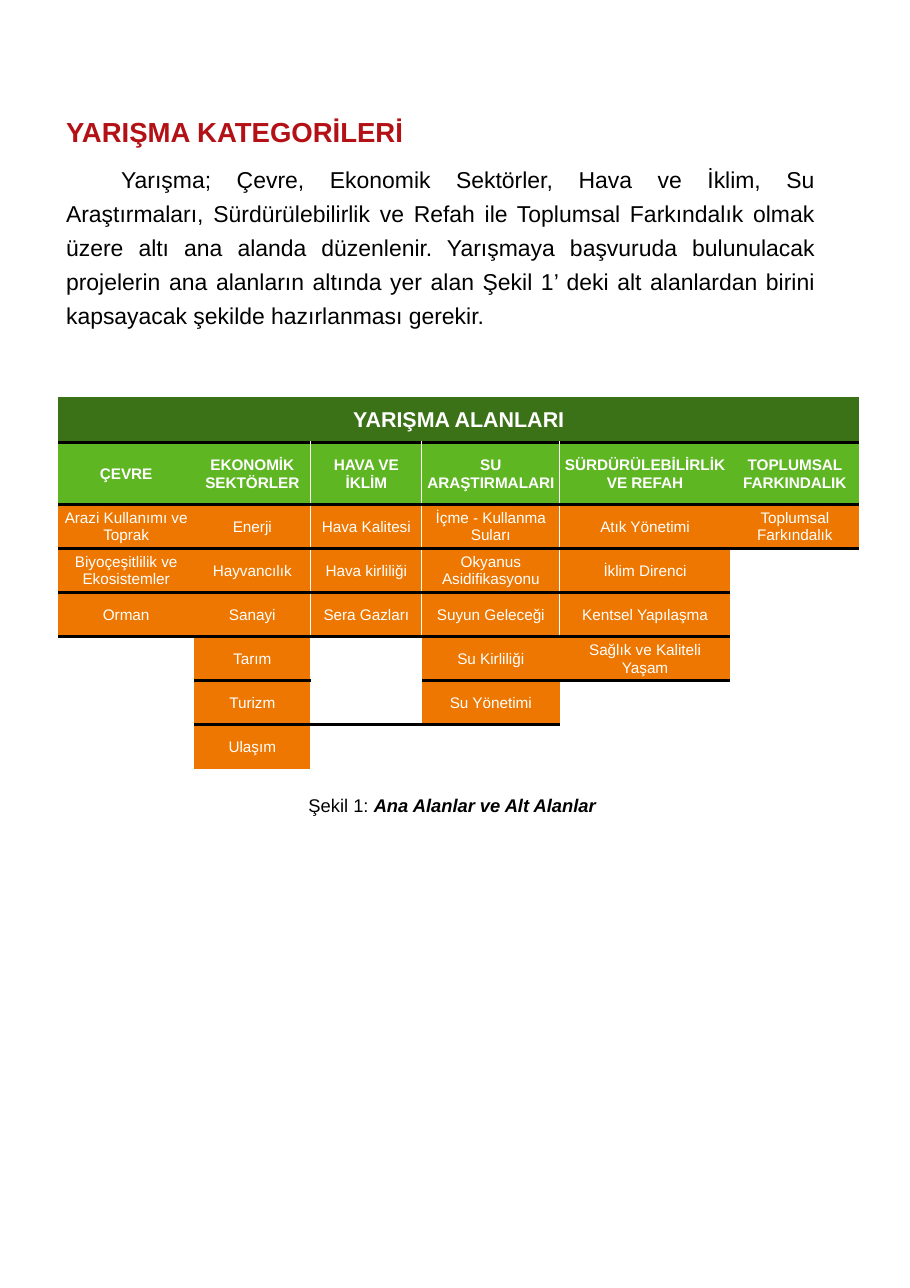
import pptx
import pptx.dml.color
import pptx.enum.text
import pptx.oxml
import pptx.oxml.ns
import pptx.util

Inches, Pt = pptx.util.Inches, pptx.util.Pt
ALIGN, ANCHOR = pptx.enum.text.PP_ALIGN, pptx.enum.text.MSO_ANCHOR
BLACK, WHITE = "000000", "FFFFFF"
DARK_GREEN, GREEN, ORANGE, RED = "3B7218", "5EB623", "ED7700", "B31116"
NO_STYLE = "{2D5ABB26-0587-4C30-8999-92F81FD0307C}"


def color(hex_value):
    return pptx.dml.color.RGBColor.from_string(hex_value)


def style(paragraph, size, hex_value, bold=False, align=ALIGN.LEFT):
    paragraph.alignment = align
    paragraph.font.name = "Arial"
    paragraph.font.size = Pt(size)
    paragraph.font.bold = bold
    paragraph.font.color.rgb = color(hex_value)


deck = pptx.Presentation()
deck.slide_width, deck.slide_height = Inches(8.26), Inches(11.69)
page = deck.slides.add_slide(deck.slide_layouts[5])
text_left, text_width = Inches(0.6), Inches(6.8)

# Heading
heading = page.shapes.title
heading.left, heading.top = text_left, Inches(1.04)
heading.width, heading.height = text_width, Inches(0.29)
heading.text_frame.text = "YARIŞMA KATEGORİLERİ"
style(heading.text_frame.paragraphs[0], 18, RED, bold=True)

# Introduction
intro = page.shapes.add_textbox(text_left, Inches(1.44), text_width, Inches(1.5))
intro.text_frame.text = (
    "Yarışma; Çevre, Ekonomik Sektörler, Hava ve İklim, Su Araştırmaları, "
    "Sürdürülebilirlik ve Refah ile Toplumsal Farkındalık olmak üzere altı ana "
    "alanda düzenlenir. Yarışmaya başvuruda bulunulacak projelerin ana alanların "
    "altında yer alan Şekil 1’ deki alt alanlardan birini kapsayacak şekilde "
    "hazırlanması gerekir.")
intro_text = intro.text_frame.paragraphs[0]
intro_text.line_spacing = 1.24
intro_text._p.get_or_add_pPr().set("indent", str(Inches(0.5)))
style(intro_text, 15, BLACK, align=ALIGN.JUSTIFY)

# Figure caption
caption = page.shapes.add_textbox(Inches(2.8), Inches(7.21), Inches(2.66), Inches(0.22))
caption_text = caption.text_frame.paragraphs[0]
style(caption_text, 12, BLACK)
caption_text.add_run().text = "Şekil 1: "
figure_name = caption_text.add_run()
figure_name.text = "Ana Alanlar ve Alt Alanlar"
figure_name.font.bold = figure_name.font.italic = True

for block in (heading, intro, caption):
    frame = block.text_frame
    frame.margin_left = frame.margin_right = frame.margin_top = frame.margin_bottom = 0
    frame.vertical_anchor = ANCHOR.TOP
    frame.auto_size = pptx.enum.text.MSO_AUTO_SIZE.NONE
    frame.word_wrap = block is not caption

# Main areas with their sub-areas, one column each
areas = {
    "ÇEVRE": ["Arazi Kullanımı ve Toprak", "Biyoçeşitlilik ve Ekosistemler", "Orman"],
    "EKONOMİK SEKTÖRLER": ["Enerji", "Hayvancılık", "Sanayi", "Tarım", "Turizm", "Ulaşım"],
    "HAVA VE İKLİM": ["Hava Kalitesi", "Hava kirliliği", "Sera Gazları"],
    "SU ARAŞTIRMALARI": ["İçme - Kullanma Suları", "Okyanus Asidifikasyonu",
                         "Suyun Geleceği", "Su Kirliliği", "Su Yönetimi"],
    "SÜRDÜRÜLEBİLİRLİK VE REFAH": ["Atık Yönetimi", "İklim Direnci", "Kentsel Yapılaşma",
                                   "Sağlık ve Kaliteli Yaşam"],
    "TOPLUMSAL FARKINDALIK": ["Toplumsal Farkındalık"],
}
columns = [["YARIŞMA ALANLARI" if i == 0 else "", area, *subareas]
           for i, (area, subareas) in enumerate(areas.items())]
column_widths = [1.23, 1.06, 1.01, 1.25, 1.55, 1.17]
row_heights = [0.42, 0.56] + [0.4] * 6
last_row = len(row_heights) - 1

grid = page.shapes.add_table(len(row_heights), len(columns), Inches(0.53), Inches(3.6),
                             Inches(sum(column_widths)), Inches(sum(row_heights))).table
grid.first_row = grid.horz_banding = False
grid._tbl.tblPr.find(pptx.oxml.ns.qn("a:tableStyleId")).text = NO_STYLE
for i, width in enumerate(column_widths):
    grid.columns[i].width = Inches(width)
for i, height in enumerate(row_heights):
    grid.rows[i].height = Inches(height)

for col, entries in enumerate(columns):
    for row in range(len(row_heights)):
        cell = grid.cell(row, col)
        filled = row < len(entries)

        # Black rules between rows, white rules beside the third column
        edges = {}
        if 0 < row <= len(entries):
            edges["lnT"] = (BLACK, 2.25)
        if filled and row < last_row:
            edges["lnB"] = (BLACK, 2.25)
        if filled and row > 0 and col in (1, 2):
            edges["lnR"] = (WHITE, 0.75)
        if filled and row > 0 and col in (2, 3) and row < len(columns[col - 1]):
            edges["lnL"] = (WHITE, 0.75)
        for edge in ("lnL", "lnR", "lnT", "lnB"):
            if edge in edges:
                line_color, points = edges[edge]
                cell._tc.get_or_add_tcPr().append(pptx.oxml.parse_xml(
                    f'<a:{edge} {pptx.oxml.ns.nsdecls("a")} w="{Pt(points)}"><a:solidFill>'
                    f'<a:srgbClr val="{line_color}"/></a:solidFill></a:{edge}>'))

        # Wider sides let the longest sub-area break in two lines
        side = 0.1 if col == 4 and row > 1 else 0.03
        cell.margin_left = cell.margin_right = Inches(side)
        cell.margin_top = cell.margin_bottom = 0
        cell.vertical_anchor = ANCHOR.MIDDLE
        if not filled:
            cell.fill.background()
            continue
        cell.fill.solid()
        cell.fill.fore_color.rgb = color((DARK_GREEN, GREEN, ORANGE)[min(row, 2)])
        cell.text = entries[row]
        label = cell.text_frame.paragraphs[0]
        if row > 0:
            label.line_spacing = Pt(11.5)
        style(label, 14 if row == 0 else 10, WHITE, bold=row < 2, align=ALIGN.CENTER)

# Banner and empty areas: first row, first column, last row, last column
for top, left, bottom, right in [(0, 0, 0, 5), (3, 5, 7, 5), (5, 0, 7, 0),
                                 (5, 2, 6, 2), (6, 4, 7, 4), (7, 2, 7, 3)]:
    grid.cell(top, left).merge(grid.cell(bottom, right))

deck.save("out.pptx")
